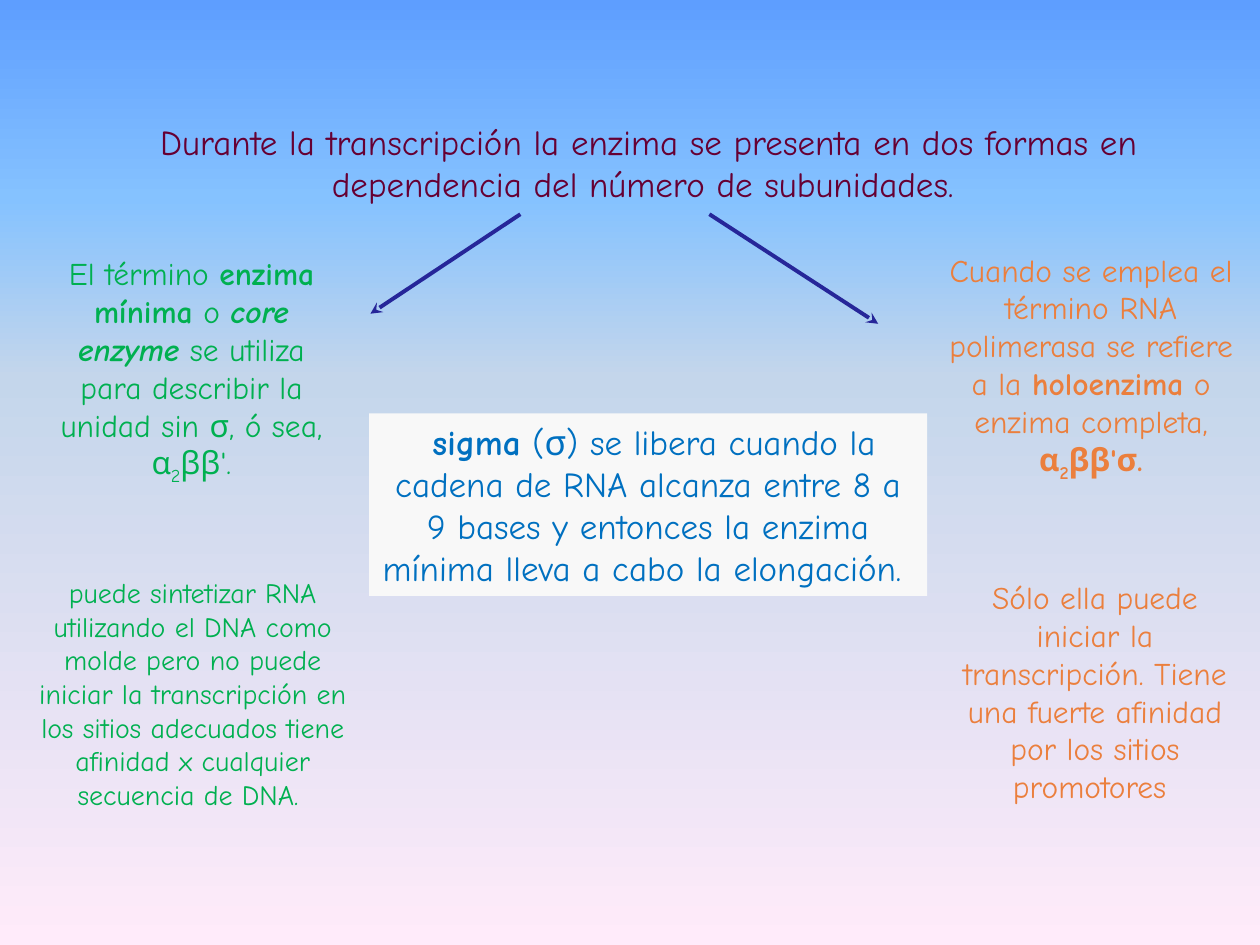
from pptx import Presentation
from pptx.dml.color import RGBColor
from pptx.enum.shapes import MSO_CONNECTOR, MSO_SHAPE
from pptx.enum.text import MSO_ANCHOR, MSO_AUTO_SIZE, PP_ALIGN
from pptx.oxml import parse_xml
from pptx.oxml.ns import nsdecls
from pptx.util import Inches, Pt

FONT = "Comic Neue"
PLUM, GREEN, ORANGE, BLUE, NAVY = "660033", "00B050", "EB7F3D", "0070C0", "262699"
PANEL = "F8F8F8"
SKY = [(0, "5E9EFF"), (21, "85C2FF"), (40, "C4D6EB"), (100, "FFEBFA")]

# Each run is (text, marks): b bold, i italic, s subscript.
TITLE = [("Durante la transcripción la enzima se presenta en dos formas en "
          "dependencia del número de subunidades. ", "")]
SIGMA = [(" ", ""), ("sigma", "b"),
         (" (σ) se libera cuando la cadena de RNA alcanza entre 8 a 9 bases "
          "y entonces la enzima mínima lleva a cabo la elongación. ", "")]
CORE = [("El término ", ""), ("enzima mínima", "b"), (" o ", ""),
        ("core enzyme", "bi"),
        (" se utiliza para describir la unidad sin σ, ó sea, α", ""),
        ("2", "s"), ("ββ'.", "")]
CORE_ROLE = [("puede sintetizar RNA utilizando el DNA como molde pero no puede "
              "iniciar la transcripción en los sitios adecuados tiene afinidad x "
              "cualquier secuencia de DNA. ", "")]
HOLOENZYME = [("Cuando se emplea el término RNA polimerasa se refiere a la ", ""),
              ("holoenzima", "b"), (" o enzima completa, ", ""),
              ("α", "b"), ("2", "bs"), ("ββ'σ.", "b")]
HOLOENZYME_ROLE = [("Sólo ella puede iniciar la transcripción. Tiene una fuerte "
                    "afinidad por los sitios promotores ", "")]

TITLE_BOX = (0.67, 0.91, 8.96, 1.11)
SIGMA_BOX = (2.93, 3.28, 4.43, 1.45)
NOTES = [  # runs, (left, top, width, height), size, color
    (CORE, (0.27, 1.97, 2.5, 1.92), 18, GREEN),
    (HOLOENZYME, (7.36, 1.94, 2.6, 1.92), 18, ORANGE),
    (CORE_ROLE, (0.11, 4.52, 2.84, 1.99), 16, GREEN),
    (HOLOENZYME_ROLE, (7.44, 4.54, 2.5, 1.92), 18, ORANGE),
]
ARROWS = [((5.63, 1.7), (6.97, 2.57)), ((4.13, 1.7), (2.94, 2.49))]


def rgb(color):
    return RGBColor.from_string(color)


def inches(values):
    return [Inches(value) for value in values]


def write(shape, runs, size, color, anchor=MSO_ANCHOR.TOP):
    frame = shape.text_frame
    frame.word_wrap = True
    frame.auto_size = MSO_AUTO_SIZE.NONE
    frame.vertical_anchor = anchor
    paragraph = frame.paragraphs[0]
    paragraph.alignment = PP_ALIGN.CENTER
    for text, marks in runs:
        run = paragraph.add_run()
        run.text = text
        font = run.font
        font.name, font.size = FONT, Pt(size)
        font.color.rgb = rgb(color)
        font.bold, font.italic = "b" in marks, "i" in marks
        if "s" in marks:
            run._r.get_or_add_rPr().set("baseline", "-25000")


def paint_background(slide, stops):
    """Fill the slide with a gradient that runs from top to bottom."""
    stop_xml = "".join(
        f'<a:gs pos="{position * 1000}"><a:srgbClr val="{color}"/></a:gs>'
        for position, color in stops)
    slide._element.cSld.insert(0, parse_xml(
        f'<p:bg {nsdecls("p", "a")}><p:bgPr><a:gradFill rotWithShape="1">'
        f'<a:gsLst>{stop_xml}</a:gsLst><a:lin ang="5400000" scaled="0"/>'
        '</a:gradFill><a:effectLst/></p:bgPr></p:bg>'))


def add_arrow(slide, start, end):
    arrow = slide.shapes.add_connector(
        MSO_CONNECTOR.STRAIGHT, *inches(start + end))
    arrow.line.color.rgb = rgb(NAVY)
    arrow.line.width = Pt(2.25)
    arrow.line._get_or_add_ln().append(
        parse_xml(f'<a:tailEnd {nsdecls("a")} type="stealth"/>'))
    arrow._element.spPr.append(parse_xml(f'<a:effectLst {nsdecls("a")}/>'))


def main():
    presentation = Presentation()
    presentation.slide_width, presentation.slide_height = inches((10, 7.5))
    slide = presentation.slides.add_slide(presentation.slide_layouts[5])
    paint_background(slide, SKY)

    title = slide.shapes.title
    title.left, title.top, title.width, title.height = inches(TITLE_BOX)
    write(title, TITLE, 20, PLUM)

    panel = slide.shapes.add_shape(MSO_SHAPE.RECTANGLE, *inches(SIGMA_BOX))
    panel.shadow.inherit = False
    panel.fill.solid()
    panel.fill.fore_color.rgb = rgb(PANEL)
    panel.line.fill.background()
    write(panel, SIGMA, 20, BLUE, anchor=MSO_ANCHOR.MIDDLE)

    for runs, box, size, color in NOTES:
        write(slide.shapes.add_textbox(*inches(box)), runs, size, color)
    for start, end in ARROWS:
        add_arrow(slide, start, end)

    presentation.save("out.pptx")


if __name__ == "__main__":
    main()
